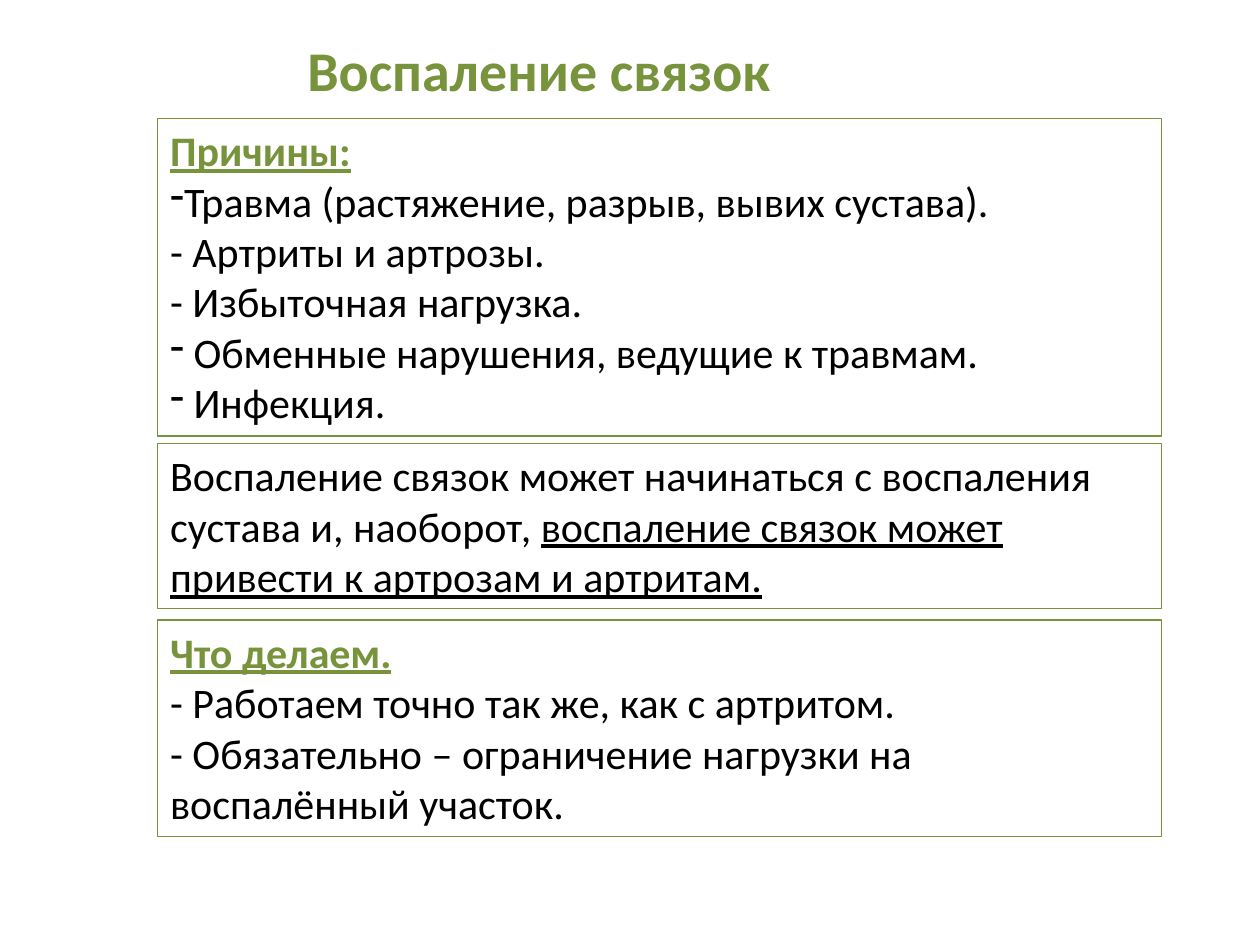
from lxml import etree
from pptx import Presentation
from pptx.dml.color import RGBColor
from pptx.enum import shapes, text
from pptx.oxml import ns
from pptx.util import Cm, Pt

GREEN = RGBColor(0x77, 0x93, 0x3C)
BLACK = RGBColor(0, 0, 0)


def add_text(p, content, size=24, color=BLACK, bold=False, underline=False):
    for i, line in enumerate(content.split("\n")):
        if i:
            p.add_line_break()
        r = p.add_run()
        r.text = line
        r.font.name = "Calibri"
        r.font.size = Pt(size)
        r.font.color.rgb = color
        r.font.bold = bold
        r.font.underline = underline


def add_dash(p):
    pPr = p._p.get_or_add_pPr()
    pPr.set("marL", "0")
    pPr.set("indent", "0")
    etree.SubElement(pPr, ns.qn("a:buFontTx"))
    etree.SubElement(pPr, ns.qn("a:buChar")).set("char", "-")


prs = Presentation()
prs.slide_width, prs.slide_height = Cm(25.4), Cm(19.05)
s = prs.slides.add_slide(prs.slide_layouts[5])

# Title
title = s.shapes.title
title.left, title.top, title.width, title.height = Cm(5.94), Cm(0.58), Cm(9.96), Cm(1.63)
tf = title.text_frame
tf.word_wrap = False
tf.auto_size = text.MSO_AUTO_SIZE.SHAPE_TO_FIT_TEXT
tf.vertical_anchor = text.MSO_ANCHOR.TOP
tf.paragraphs[0].alignment = text.PP_ALIGN.LEFT
add_text(tf.paragraphs[0], "Воспаление связок", size=32, color=GREEN, bold=True)

# Framed boxes: top, height, paragraphs as (dash bullet, runs)
heading = dict(color=GREEN, bold=True, underline=True)
boxes = [
    (2.39, 6.4, [
        (False, [("Причины:", heading)]),
        (True, [("Травма (растяжение, разрыв, вывих сустава).\n"
                 "- Артриты и артрозы.\n"
                 "- Избыточная нагрузка.", {})]),
        (True, [(" Обменные нарушения, ведущие к травмам.", {})]),
        (True, [(" Инфекция.", {})]),
    ]),
    (8.94, 3.33, [
        (False, [("Воспаление связок может начинаться с воспаления "
                  "сустава и, наоборот, ", {}),
                 ("воспаление связок может привести к артрозам и артритам.",
                  dict(underline=True))]),
    ]),
    (12.5, 4.37, [
        (False, [("Что делаем.", heading)]),
        (False, [("- Работаем точно так же, как с артритом.\n"
                  "- Обязательно – ограничение нагрузки на воспалённый участок.", {})]),
    ]),
]
for top, height, paragraphs in boxes:
    sp = s.shapes.add_shape(shapes.MSO_SHAPE.RECTANGLE,
                            Cm(3.18), Cm(top), Cm(20.24), Cm(height))
    sp.shadow.inherit = False
    sp.fill.background()
    sp.line.color.rgb = GREEN
    sp.line.width = Pt(0.75)
    tf = sp.text_frame
    tf.word_wrap = True
    tf.auto_size = text.MSO_AUTO_SIZE.SHAPE_TO_FIT_TEXT
    tf.vertical_anchor = text.MSO_ANCHOR.TOP
    for i, (dash, runs) in enumerate(paragraphs):
        p = tf.add_paragraph() if i else tf.paragraphs[0]
        p.alignment = text.PP_ALIGN.LEFT
        if dash:
            add_dash(p)
        for content, fmt in runs:
            add_text(p, content, **fmt)

prs.save("out.pptx")
